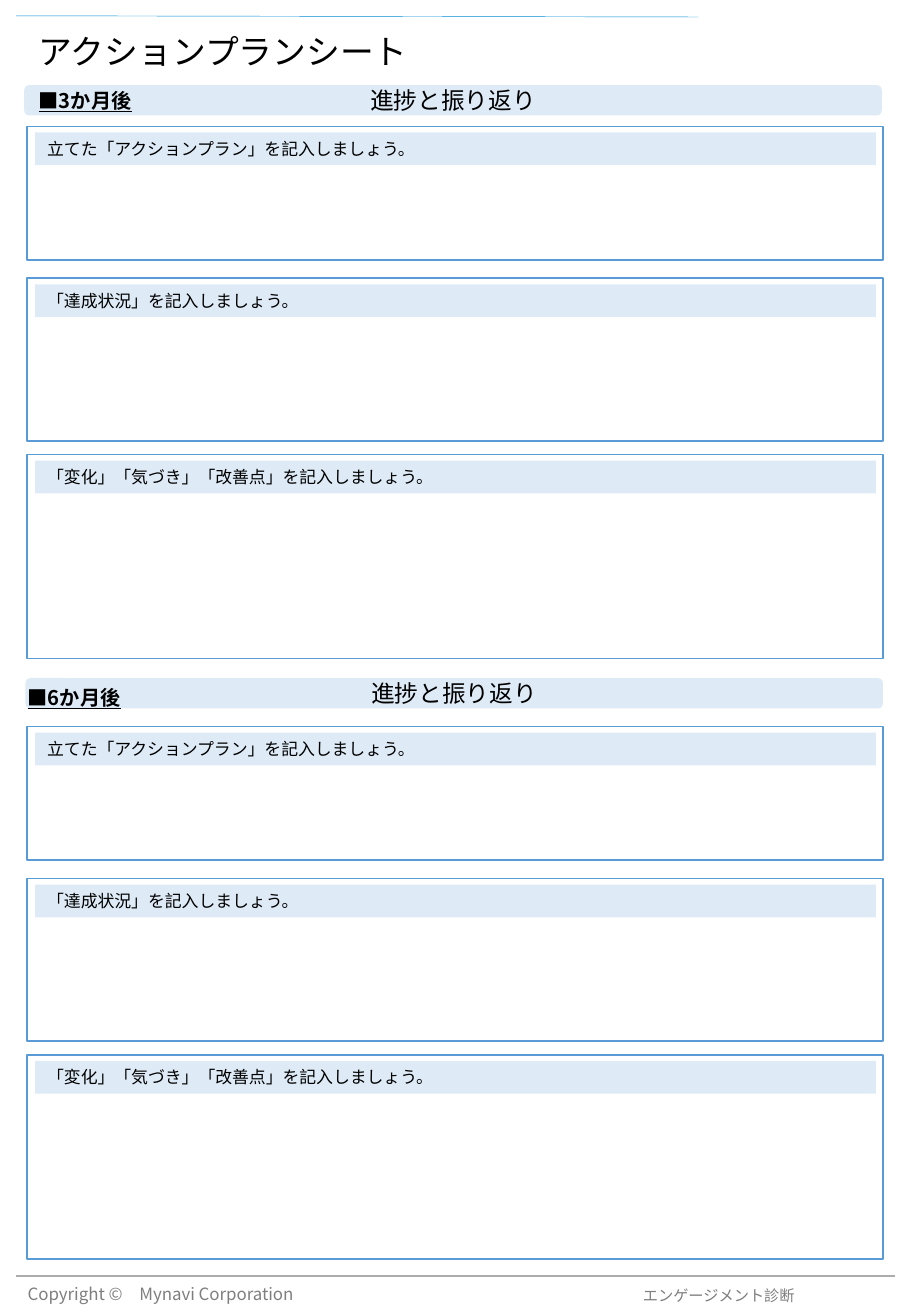
from lxml.etree import SubElement
from pptx import Presentation
from pptx.dml.color import RGBColor
from pptx.enum.shapes import MSO_CONNECTOR as Connector, MSO_SHAPE as Shape
from pptx.enum.text import MSO_ANCHOR as Anchor, PP_ALIGN as Align
from pptx.oxml.ns import qn
from pptx.util import Inches, Pt

FONT = "Noto Sans CJK JP"
BLACK = RGBColor(0x00, 0x00, 0x00)
PALE_BLUE = RGBColor(0xDE, 0xEB, 0xF7)
FRAME_BLUE = RGBColor(0x5B, 0x9B, 0xD5)
TOP_BLUE = RGBColor(0x00, 0x8C, 0xD6)
RULE_GRAY = RGBColor(0xAC, 0xAC, 0xAC)
COPYRIGHT_GRAY = RGBColor(0x7F, 0x7F, 0x7F)
PRODUCT_GRAY = RGBColor(0x7E, 0x7E, 0x7E)

SECTIONS = [
    # banner left, banner top, label, label left, label top, frames top
]
QUESTIONS = [
    (0, 1.1, "立てた「アクションプラン」を記入しましょう。"),
    (1.25, 1.34, "「達成状況」を記入しましょう。"),
    (2.7, 1.68, "「変化」「気づき」「改善点」を記入しましょう。"),
]
SECTIONS = [
    (0.2, 0.7, "■3か月後", 0.22, 0.68, 1.04),
    (0.21, 5.58, "■6か月後", 0.13, 5.59, 5.98),
]


def write(shape, text, size, color=BLACK, anchor=Anchor.TOP, align=Align.LEFT):
    """Put one formatted paragraph into a shape and return it."""
    frame = shape.text_frame
    frame.text = text
    frame.word_wrap = True
    frame.vertical_anchor = anchor
    paragraph = frame.paragraphs[0]
    paragraph.alignment = align
    font = paragraph.runs[0].font
    font.size = Pt(size)
    font.color.rgb = color
    font.name = FONT
    SubElement(paragraph.runs[0].font._element, qn("a:ea"), typeface=FONT)
    return paragraph


def add_text(slide, box, text, size, **style):
    """Add a text box and return its paragraph."""
    return write(slide.shapes.add_textbox(*map(Inches, box)), text, size, **style)


def add_panel(slide, kind, box, fill=None, line=None):
    """Add a flat shape with an optional fill and outline."""
    panel = slide.shapes.add_shape(kind, *map(Inches, box))
    panel.shadow.inherit = False
    if fill is None:
        panel.fill.background()
    else:
        panel.fill.solid()
        panel.fill.fore_color.rgb = fill
    if line is None:
        panel.line.fill.background()
    else:
        panel.line.color.rgb = line
        panel.line.width = Pt(1)
    return panel


def add_rule(slide, ends, color, width):
    """Add a thin straight line without a shadow."""
    rule = slide.shapes.add_connector(Connector.STRAIGHT, *map(Inches, ends))
    rule.line.color.rgb = color
    rule.line.width = Pt(width)
    SubElement(rule._element.spPr, qn("a:effectLst"))


def add_question(slide, top, height, prompt):
    """Add an empty answer frame headed by its prompt."""
    add_panel(slide, Shape.RECTANGLE, (0.22, top, 7.05, height), line=FRAME_BLUE)
    heading = add_panel(slide, Shape.RECTANGLE, (0.29, top + 0.05, 6.92, 0.27), fill=PALE_BLUE)
    write(heading, prompt, 10)


def add_section(slide, left, top, label, label_left, label_top, frames_top):
    """Add a review section with its banner, label and questions."""
    banner = add_panel(slide, Shape.ROUNDED_RECTANGLE, (left, top, 7.06, 0.25), fill=PALE_BLUE)
    write(banner, "進捗と振り返り", 14, anchor=Anchor.MIDDLE, align=Align.CENTER)
    month = add_text(slide, (label_left, label_top, 1.12, 0.3), label, 12)
    month.runs[0].font.bold = True
    month.runs[0].font.underline = True
    for offset, height, prompt in QUESTIONS:
        add_question(slide, frames_top + offset, height, prompt)


def add_footer(slide):
    """Add the bottom rule, copyright line and sheet family name."""
    copyright_line = add_text(slide, (0.13, 10.56, 2.56, 0.2), "Copyright ©\u3000Mynavi Corporation",
                              10, color=COPYRIGHT_GRAY, anchor=Anchor.MIDDLE)
    copyright_line.line_spacing = 0.9
    add_rule(slide, (7.37, 10.5, 0.13, 10.5), RULE_GRAY, 0.75)
    family = slide.shapes.add_textbox(*map(Inches, (4.49, 10.58, 2.05, 0.13)))
    frame = family.text_frame
    frame.margin_left = frame.margin_right = frame.margin_bottom = 0
    frame.margin_top = Inches(0.01)
    write(family, "エンゲージメント診断", 9, color=PRODUCT_GRAY, align=Align.RIGHT)


def main():
    """Build the action plan sheet."""
    deck = Presentation()
    deck.slide_width, deck.slide_height = Inches(7.5), Inches(10.83)
    slide = deck.slides.add_slide(deck.slide_layouts[6])
    add_footer(slide)
    add_rule(slide, (5.75, 0.14, 0.13, 0.13), TOP_BLUE, 0.25)
    title = add_text(slide, (0.22, 0.17, 7.05, 0.54), "アクションプランシート", 20, anchor=Anchor.MIDDLE)
    title.line_spacing = 0.9
    for section in SECTIONS:
        add_section(slide, *section)
    deck.save("out.pptx")


if __name__ == "__main__":
    main()
